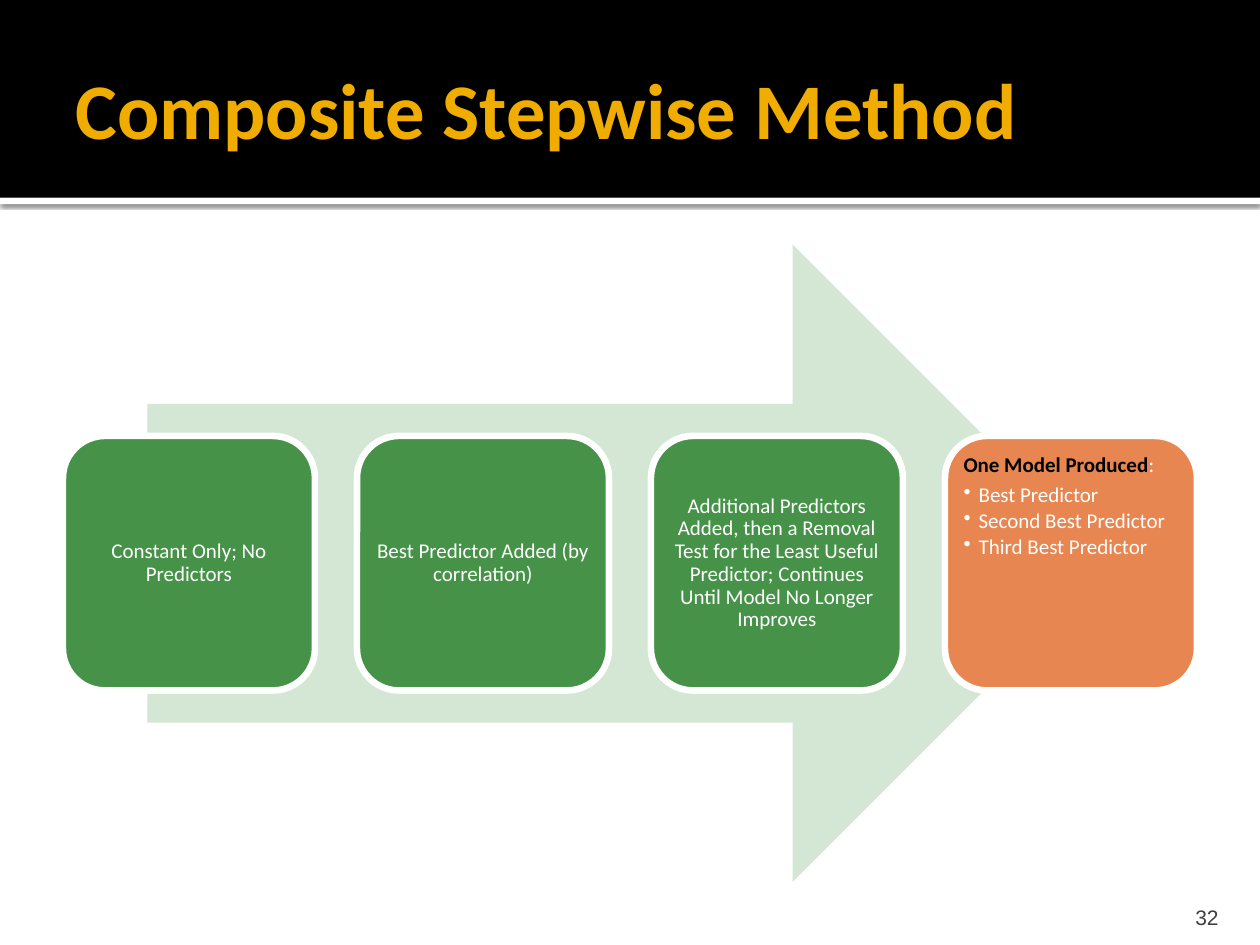
from lxml import etree
from pptx import Presentation
from pptx.dml.color import RGBColor
from pptx.enum.shapes import MSO_SHAPE
from pptx.enum.text import MSO_ANCHOR, PP_ALIGN
from pptx.oxml import parse_xml
from pptx.oxml.ns import nsdecls, qn
from pptx.util import Inches, Pt

RECTANGLE, ROUNDED, ARROW = (
    MSO_SHAPE.RECTANGLE, MSO_SHAPE.ROUNDED_RECTANGLE, MSO_SHAPE.RIGHT_ARROW)
TOP, MIDDLE, BOTTOM = MSO_ANCHOR.TOP, MSO_ANCHOR.MIDDLE, MSO_ANCHOR.BOTTOM
LEFT, CENTER, RIGHT = PP_ALIGN.LEFT, PP_ALIGN.CENTER, PP_ALIGN.RIGHT

BLACK, WHITE, GOLD = "000000", "FFFFFF", "F0AD00"
GREEN, PALE_GREEN, ORANGE, GREY = "479249", "D4E6D4", "E88651", "3F3F3F"

STEPS = [
    "Constant Only; No Predictors",
    "Best Predictor Added (by correlation)",
    "Additional Predictors Added, then a Removal Test for the Least Useful "
    "Predictor; Continues Until Model No Longer Improves",
]
PREDICTORS = ["Best Predictor", "Second Best Predictor", "Third Best Predictor"]
CARD_LEFT, CARD_TOP, CARD_WIDTH, CARD_HEIGHT = 0.5, 3.46, 2, 2.02
CARD_PITCH = 7 / 3


def color(value):
    return RGBColor.from_string(value)


def add_shape(page, kind, left, top, width, height, fill):
    shape = page.shapes.add_shape(
        kind, Inches(left), Inches(top), Inches(width), Inches(height))
    shape.shadow.inherit = False
    shape.fill.solid()
    shape.fill.fore_color.rgb = color(fill)
    shape.line.fill.background()
    return shape


def set_frame(frame, anchor, left, top, right, bottom):
    frame.word_wrap = True
    frame.vertical_anchor = anchor
    frame.margin_left, frame.margin_top = Inches(left), Inches(top)
    frame.margin_right, frame.margin_bottom = Inches(right), Inches(bottom)


def add_run(para, text, size, value, bold=False, font="Calibri"):
    span = para.add_run()
    span.text = text
    span.font.name, span.font.size, span.font.bold = font, Pt(size), bold
    span.font.color.rgb = color(value)


def format_para(para, align, space_after):
    para.alignment = align
    para.line_spacing = 0.9
    para.space_after = Pt(space_after)


def add_bullet(para):
    properties = para._p.get_or_add_pPr()
    properties.set("marL", str(Inches(0.12)))
    properties.set("indent", str(Inches(-0.12)))
    etree.SubElement(properties, qn("a:buChar")).set("char", "•")


def add_band_shadow(shape):
    effects = shape._element.spPr.find(qn("a:effectLst"))
    effects.append(parse_xml(
        f'<a:outerShdw {nsdecls("a")} blurRad="{Pt(2.5)}" dist="{Pt(0.8)}" '
        'dir="5400000" rotWithShape="0"><a:srgbClr val="000000">'
        '<a:alpha val="60000"/></a:srgbClr></a:outerShdw>'))


def add_header(page, text):
    add_band_shadow(add_shape(page, RECTANGLE, 0, 1.57, 10, 0.05, WHITE))
    add_shape(page, RECTANGLE, 0, 0, 10, 1.57, BLACK)
    title = page.shapes.title
    title.left, title.top = Inches(0.5), Inches(0.17)
    title.width, title.height = Inches(9), Inches(1.37)
    # The title has to stand in front of the black band.
    title.element.getparent().append(title.element)
    set_frame(title.text_frame, MIDDLE, 0.1, 0.05, 0.05, 0.05)
    para = title.text_frame.paragraphs[0]
    para.alignment = LEFT
    add_run(para, text, 45, GOLD, bold=True)


def add_card(page, index, fill, anchor):
    """Add the card at this place in the row and return its text frame."""
    card = add_shape(page, ROUNDED, CARD_LEFT + index * CARD_PITCH, CARD_TOP,
                     CARD_WIDTH, CARD_HEIGHT, fill)
    card.line.color.rgb = color(WHITE)
    card.line.width = Pt(3.78)
    set_frame(card.text_frame, anchor, 0.05, 0.05, 0.05, 0.05)
    return card.text_frame


def add_step(page, index, text):
    para = add_card(page, index, GREEN, MIDDLE).paragraphs[0]
    format_para(para, CENTER, 4.2)
    add_run(para, text, 12, WHITE)


def add_result(page, index):
    frame = add_card(page, index, ORANGE, TOP)
    heading = frame.paragraphs[0]
    format_para(heading, LEFT, 4.2)
    add_run(heading, "One Model Produced", 12, BLACK, bold=True)
    add_run(heading, ":", 12, WHITE)
    for predictor in PREDICTORS:
        para = frame.add_paragraph()
        para.level = 1
        format_para(para, LEFT, 1.8)
        add_bullet(para)
        add_run(para, predictor, 12, WHITE)


def add_page_number(page, number):
    box = page.shapes.add_textbox(
        Inches(8.97), Inches(7.08), Inches(0.8), Inches(0.3))
    set_frame(box.text_frame, BOTTOM, 0.1, 0.05, 0.1, 0)
    para = box.text_frame.paragraphs[0]
    para.alignment = RIGHT
    add_run(para, number, 12, GREY, font="Arial")


def main():
    deck = Presentation()
    deck.slide_width, deck.slide_height = Inches(10), Inches(7.5)
    page = deck.slides.add_slide(deck.slide_layouts[5])
    add_header(page, "Composite Stepwise Method")
    add_shape(page, ARROW, 1.17, 1.94, 7.65, 5.06, PALE_GREEN)
    for index, step in enumerate(STEPS):
        add_step(page, index, step)
    add_result(page, len(STEPS))
    add_page_number(page, "32")
    deck.save("out.pptx")


if __name__ == "__main__":
    main()
